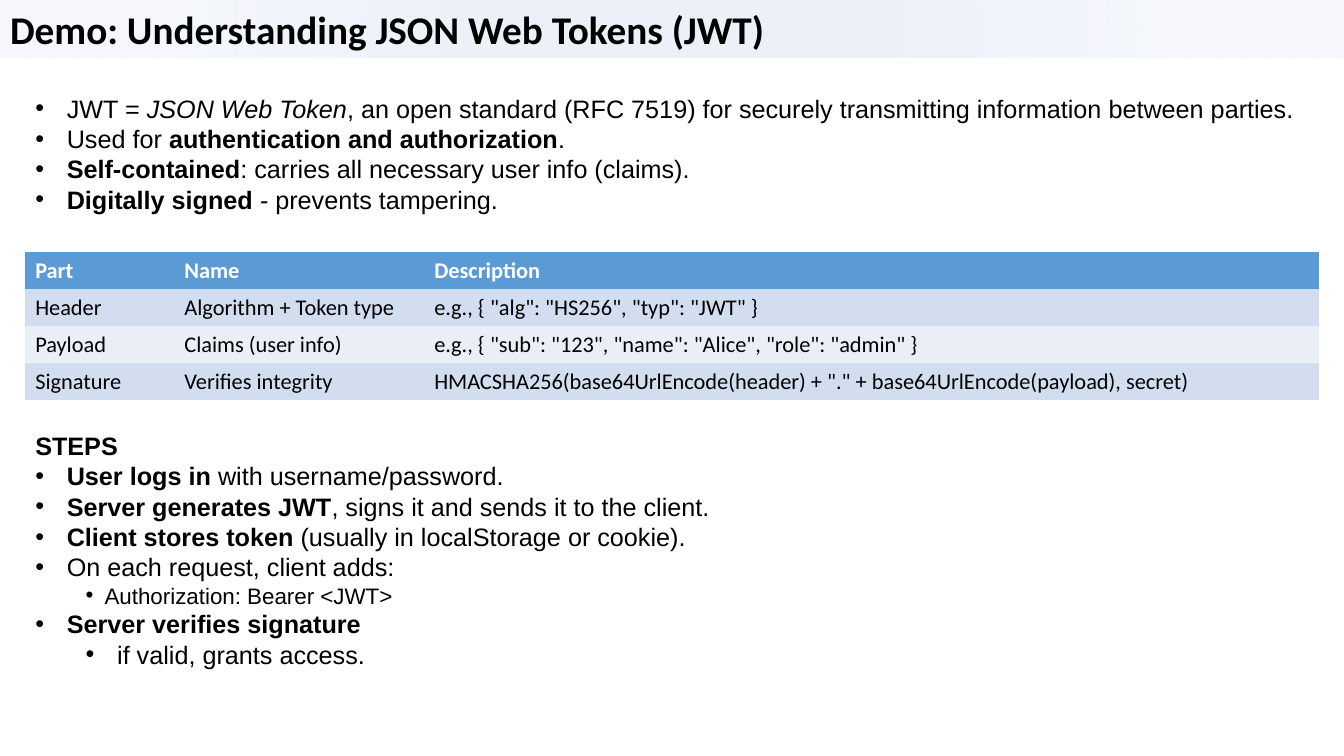
from lxml.etree import SubElement
from pptx import Presentation
from pptx.dml.color import RGBColor
from pptx.enum.text import MSO_ANCHOR, MSO_AUTO_SIZE, PP_ALIGN
from pptx.oxml.ns import qn
from pptx.util import Pt

HUES = {"text": "000000", "white": "FFFFFF", "tint": "4472C4",
        "head": "5B9BD5", "odd": "D2DEEF", "even": "EAEFF7"}


def style(run, face, size, bold=False, hue="text"):
    font = run.font
    font.name, font.size, font.bold = face, Pt(size), bold
    font.color.rgb = RGBColor.from_string(HUES[hue])


def fill_list(box, place, lines):
    """Each line: level, indent, hang, size, then (text, mark) runs."""
    box.left, box.top, box.width, box.height = map(Pt, place)
    frame = box.text_frame
    frame.word_wrap = False
    frame.auto_size = MSO_AUTO_SIZE.SHAPE_TO_FIT_TEXT
    frame.vertical_anchor = MSO_ANCHOR.MIDDLE
    for i, (level, indent, hang, size, runs) in enumerate(lines):
        para = frame.add_paragraph() if i else frame.paragraphs[0]
        para.level = level
        para.space_before = Pt(0)
        props = para._p.get_or_add_pPr()
        props.set("marL", str(Pt(indent)))
        props.set("indent", str(-Pt(hang)))
        if hang:
            SubElement(props, qn("a:buFont")).set("typeface", "Arial")
            SubElement(props, qn("a:buChar")).set("char", "•")
        else:
            SubElement(props, qn("a:buNone"))
        for text, mark in runs:
            run = para.add_run()
            run.text = text
            style(run, "Arial", size, mark == "b")
            run.font.italic = mark == "i"


deck = Presentation()
deck.slide_width, deck.slide_height = Pt(960), Pt(540)
slide = deck.slides.add_slide(deck.slide_layouts[3])
title, facts, steps = slide.placeholders

# Title bar with a faint radial tint
title.left, title.top, title.width, title.height = Pt(0), Pt(0), Pt(960), Pt(41.2)
title.text_frame.text = "Demo: Understanding JSON Web Tokens (JWT)"
title.text_frame.vertical_anchor = MSO_ANCHOR.MIDDLE
head = title.text_frame.paragraphs[0]
head.alignment = PP_ALIGN.LEFT
style(head.runs[0], "Calibri", 28, True)
title.fill.gradient()
for stop, spot in zip(title.fill.gradient_stops, (0.26, 0.76)):
    stop.position = spot
    stop.color.rgb = RGBColor.from_string(HUES["tint"])
grad = title._element.spPr.find(qn("a:gradFill"))
for tone, alpha in zip(grad.iter(qn("a:srgbClr")), (10000, 5000)):
    SubElement(tone, qn("a:alpha")).set("val", str(alpha))
grad.remove(grad.find(qn("a:lin")))
ring = SubElement(grad, qn("a:path"))
ring.set("path", "circle")
focus = SubElement(ring, qn("a:fillToRect"))
for side in "ltrb":
    focus.set(side, "0")

# Facts about the token
main = (0, 22.5, 22.5, 18)
fill_list(facts, (18, 62.6, 924.4, 94.3), [
    (*main, [("JWT = ", ""), ("JSON Web Token", "i"),
             (", an open standard (RFC 7519) for securely transmitting "
              "information between parties.", "")]),
    (*main, [("Used for ", ""), ("authentication and authorization", "b"), (".", "")]),
    (*main, [("Self-contained", "b"),
             (": carries all necessary user info (claims).", "")]),
    (*main, [("Digitally signed ", "b"), ("- prevents tampering.", "")]),
])

# Table of token parts
rows = [
    ("Part", "Name", "Description"),
    ("Header", "Algorithm + Token type", 'e.g., { "alg": "HS256", "typ": "JWT" }'),
    ("Payload", "Claims (user info)",
     'e.g., { "sub": "123", "name": "Alice", "role": "admin" }'),
    ("Signature", "Verifies integrity",
     'HMACSHA256(base64UrlEncode(header) + "." + base64UrlEncode(payload), secret)'),
]
frame = slide.shapes.add_table(4, 3, Pt(18), Pt(180), Pt(924.4), Pt(105.8))
table = frame.table
# Plain style without grid lines
table._tbl.tblPr.find(qn("a:tableStyleId")).text = "{2D5ABB26-0587-4C30-8999-92F81FD0307C}"
for col, width in zip(table.columns, (106.5, 178.5, 639.4)):
    col.width = Pt(width)
for r, row in enumerate(rows):
    table.rows[r].height = Pt(26.45)
    for c, text in enumerate(row):
        cell = table.cell(r, c)
        cell.text_frame.text = text
        cell.vertical_anchor = MSO_ANCHOR.MIDDLE
        cell.fill.solid()
        shade = ("head", "odd", "even", "odd")[r]
        cell.fill.fore_color.rgb = RGBColor.from_string(HUES[shade])
        style(cell.text_frame.paragraphs[0].runs[0], "Calibri", 16,
              r == 0, "text" if r else "white")

# Steps of the login flow
fill_list(steps, (18, 303.1, 505.4, 179.3), [
    (0, 0, 0, 18, [("STEPS", "b")]),
    (*main, [("User logs in", "b"), (" with username/password.", "")]),
    (*main, [("Server generates JWT", "b"),
             (", signs it and sends it to the client.", "")]),
    (*main, [("Client stores token", "b"),
             (" (usually in localStorage or cookie).", "")]),
    (*main, [("On each request, client adds:", "")]),
    (1, 49.5, 13.5, 16, [("Authorization: Bearer <JWT>", "")]),
    (*main, [("Server verifies signature", "b")]),
    (1, 58.5, 22.5, 18, [("if valid, grants access.", "")]),
])

deck.save("out.pptx")
